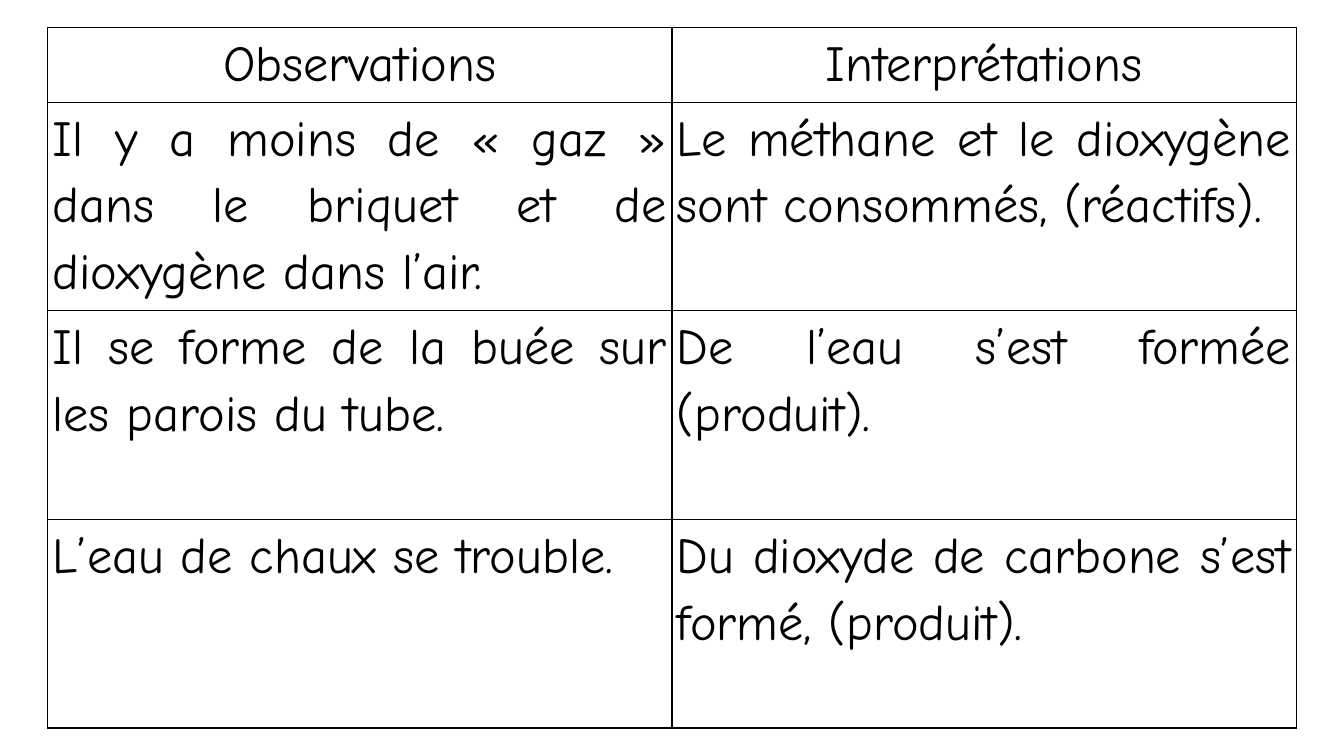
from pptx import Presentation
from pptx.dml.color import RGBColor
from pptx.enum.text import PP_ALIGN
from pptx.oxml import parse_xml
from pptx.oxml.ns import nsdecls
from pptx.util import Pt

BLACK = RGBColor(0, 0, 0)
ROWS = [
    ("Observations", "Interprétations"),
    ("Il y a moins de « gaz » dans le briquet et de dioxygène dans l’air.",
     "Le méthane et le dioxygène sont consommés, (réactifs)."),
    ("Il se forme de la buée sur les parois du tube.",
     "De l’eau s’est formée (produit)."),
    ("L’eau de chaux se trouble.",
     "Du dioxyde de carbone s’est formé, (produit)."),
]


def border(cell):
    props = cell._tc.get_or_add_tcPr()
    for place, side in enumerate(("lnL", "lnR", "lnT", "lnB")):
        props.insert(place, parse_xml(
            f'<a:{side} {nsdecls("a")} w="{Pt(1)}"><a:solidFill>'
            f'<a:srgbClr val="{BLACK}"/></a:solidFill></a:{side}>'))


deck = Presentation()
deck.slide_width, deck.slide_height = Pt(960), Pt(540)
slide = deck.slides.add_slide(deck.slide_layouts[6])

frame = slide.shapes.add_table(4, 2, Pt(34), Pt(19.5), Pt(892), Pt(500.5))
table = frame.table
table.first_row = table.horz_banding = False
for col in table.columns:
    col.width = Pt(446)

for i, texts in enumerate(ROWS):
    table.rows[i].height = Pt(149 if i else 53.5)
    for j, text in enumerate(texts):
        cell = table.cell(i, j)
        cell.fill.background()
        border(cell)
        cell.margin_left = cell.margin_right = Pt(3.6)
        cell.margin_top = cell.margin_bottom = 0
        cell.text = text
        para = cell.text_frame.paragraphs[0]
        para.alignment = PP_ALIGN.JUSTIFY if i else PP_ALIGN.CENTER
        para.line_spacing = 1.15
        para.font.name = "Comic Neue"
        para.font.size = Pt(36)
        para.font.color.rgb = BLACK

deck.save("out.pptx")
